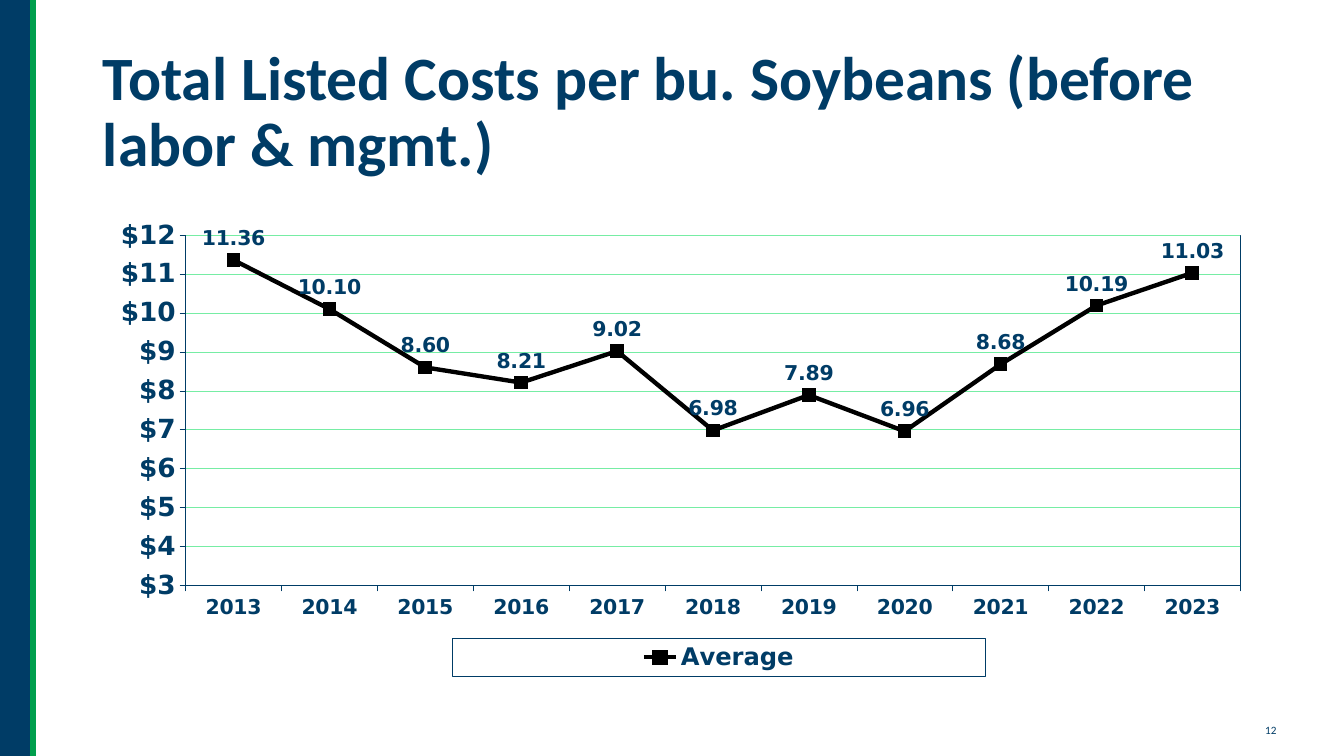
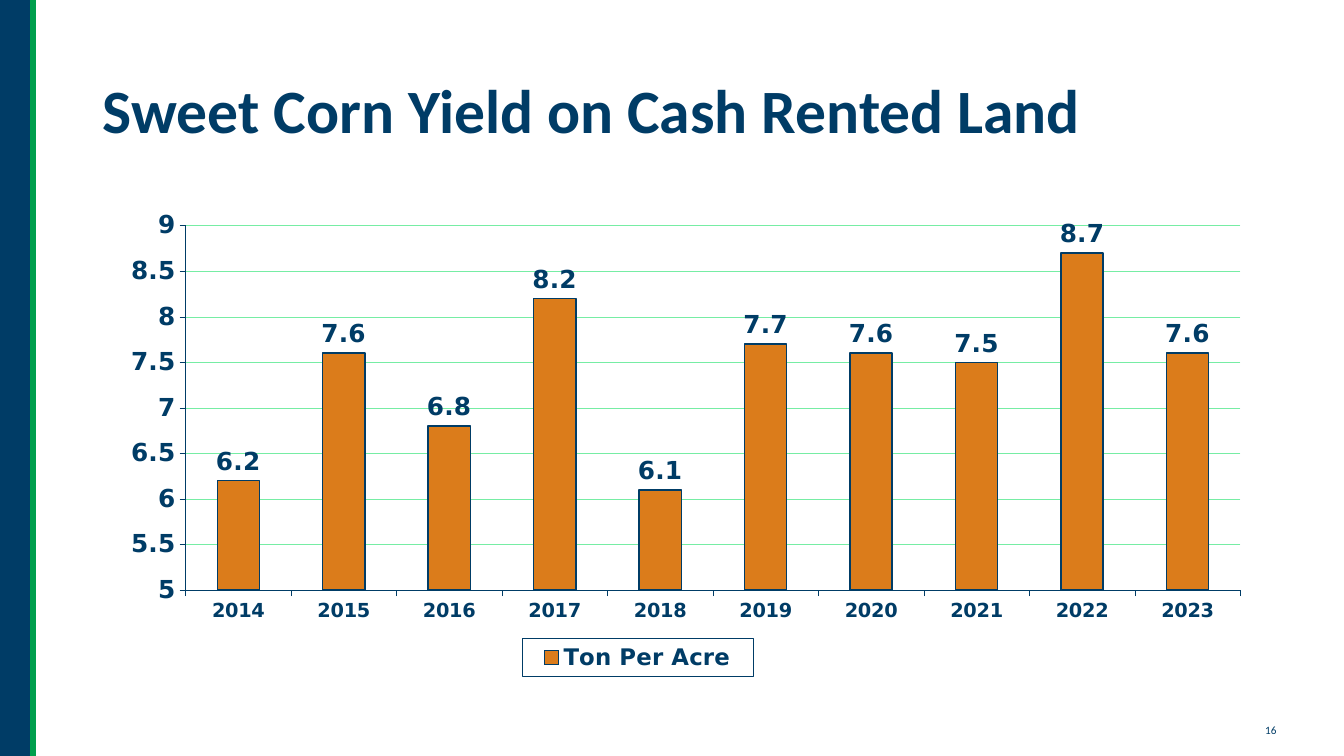
from lxml.etree import SubElement
from pptx import Presentation
from pptx.chart.data import CategoryChartData
from pptx.dml.color import RGBColor
from pptx.enum.chart import (XL_CHART_TYPE, XL_LABEL_POSITION, XL_LEGEND_POSITION,
                             XL_MARKER_STYLE, XL_TICK_LABEL_POSITION, XL_TICK_MARK)
from pptx.enum.shapes import MSO_CONNECTOR, MSO_SHAPE
from pptx.enum.text import MSO_ANCHOR, MSO_AUTO_SIZE, PP_ALIGN
from pptx.oxml import parse_xml
from pptx.oxml.ns import nsdecls, qn
from pptx.util import Cm, Pt

COLORS = {"navy": "003C66", "green": "009F4D", "grid": "76EDA4",
          "orange": "DB7C1B", "black": "000000"}


def rgb(name):
    return RGBColor.from_string(COLORS[name])


class Deck:
    text_font = "Calibri"
    chart_font = "DejaVu Sans"

    def __init__(self):
        self.prs = Presentation()
        self.prs.slide_width, self.prs.slide_height = Cm(33.87), Cm(19.05)
        self.s = None

    def slide(self, title, number):
        self.s = self.prs.slides.add_slide(self.prs.slide_layouts[5])
        self.bands()
        self.title(title)
        self.number(number)

    def style(self, font, size, name, bold=True):
        font.name, font.size, font.bold = name, Pt(size), bold
        font.color.rgb = rgb("navy")

    def stroke(self, line, color, width):
        line.color.rgb = rgb(color)
        line.width = Pt(width)

    def bands(self):
        height = self.prs.slide_height
        sp = self.s.shapes.add_shape(MSO_SHAPE.RECTANGLE, 0, 0, Cm(0.84), height)
        sp.shadow.inherit = False
        sp.fill.solid()
        sp.fill.fore_color.rgb = rgb("navy")
        sp.line.fill.background()
        edge = self.s.shapes.add_connector(MSO_CONNECTOR.STRAIGHT, Cm(0.84), 0, Cm(0.84), height)
        self.stroke(edge.line, "green", 4.5)
        SubElement(edge._element.spPr, qn("a:effectLst"))

    def title(self, text):
        sp = self.s.shapes.title
        sp.left, sp.top, sp.width, sp.height = Cm(2.34), Cm(1.02), Cm(29.21), Cm(3.68)
        tf = sp.text_frame
        tf.text = text
        tf.word_wrap = True
        tf.auto_size = MSO_AUTO_SIZE.NONE
        tf.vertical_anchor = MSO_ANCHOR.MIDDLE
        p = tf.paragraphs[0]
        p.alignment = PP_ALIGN.LEFT
        p.line_spacing = 0.9
        self.style(p.font, 44, self.text_font)

    def number(self, number):
        tf = self.s.shapes.add_textbox(Cm(31.6), Cm(18.11), Cm(0.86), Cm(0.61)).text_frame
        tf.word_wrap = False
        p = tf.paragraphs[0]
        p.text = str(number)
        p.alignment = PP_ALIGN.CENTER
        self.style(p.font, 8, self.text_font, False)

    def layout(self, parent, index, box, inner=False):
        for old in parent.findall(qn("c:layout")):
            parent.remove(old)
        layout = parse_xml(f"<c:layout {nsdecls('c')}><c:manualLayout/></c:layout>")
        settings = [("layoutTarget", "inner")] if inner else []
        settings += [("xMode", "edge"), ("yMode", "edge"), *zip("xywh", box)]
        for tag, value in settings:
            SubElement(layout[0], qn(f"c:{tag}"), val=str(value))
        parent.insert(index, layout)

    def frame(self):
        return parse_xml(
            f"<c:spPr {nsdecls('c', 'a')}><a:noFill/><a:ln w='3175'><a:solidFill>"
            f"<a:srgbClr val='{COLORS['navy']}'/></a:solidFill></a:ln></c:spPr>")

    def axis(self, axis, size):
        axis.major_tick_mark = XL_TICK_MARK.OUTSIDE
        axis.minor_tick_mark = XL_TICK_MARK.NONE
        self.stroke(axis.format.line, "navy", 0.25)
        self.style(axis.tick_labels.font, size, self.chart_font)

    def chart(self, kind, name, first_year, values, size, small, legend_size, scale,
              axis_format, label_format, label_size, label_position, plot_box, legend_box):
        data = CategoryChartData()
        data.categories = [str(first_year + i) for i in range(len(values))]
        data.add_series(name, values)
        chart = self.s.shapes.add_chart(
            kind, Cm(2.34), Cm(5.08), Cm(29.21), Cm(12.09), data).chart
        chart.has_title = False
        self.style(chart.font, size, self.chart_font)

        self.axis(chart.category_axis, small)
        chart.category_axis.tick_label_position = XL_TICK_LABEL_POSITION.LOW
        va = chart.value_axis
        self.axis(va, size)
        va.minimum_scale, va.maximum_scale, va.major_unit = scale
        va.tick_labels.number_format = axis_format
        va.tick_labels.number_format_is_linked = False
        va.has_major_gridlines = True
        self.stroke(va.major_gridlines.format.line, "grid", 0.25)

        plot = chart.plots[0]
        plot.vary_by_categories = False
        plot.has_data_labels = True
        labels = plot.data_labels
        labels.show_value = True
        labels.number_format = label_format
        labels.number_format_is_linked = False
        labels.position = label_position
        self.style(labels.font, label_size, self.chart_font)

        chart.has_legend = True
        legend = chart.legend
        legend.position = XL_LEGEND_POSITION.BOTTOM
        legend.include_in_layout = False
        self.style(legend.font, legend_size, self.chart_font)
        self.layout(legend._element, 1, legend_box)
        legend._element.find(qn("c:txPr")).addprevious(self.frame())
        self.layout(chart._chartSpace.chart.plotArea, 0, plot_box, True)
        return chart

    def line_chart(self, **options):
        chart = self.chart(XL_CHART_TYPE.LINE_MARKERS,
                           label_position=XL_LABEL_POSITION.ABOVE, **options)
        chart._chartSpace.chart.plotArea.append(self.frame())
        series = chart.plots[0].series[0]
        series.smooth = False
        self.stroke(series.format.line, "black", 3.13)
        marker = series.marker
        marker.style, marker.size = XL_MARKER_STYLE.SQUARE, 9
        marker.format.fill.solid()
        marker.format.fill.fore_color.rgb = rgb("black")
        marker.format.line.color.rgb = rgb("black")

    def column_chart(self, **options):
        chart = self.chart(XL_CHART_TYPE.COLUMN_CLUSTERED,
                           label_position=XL_LABEL_POSITION.OUTSIDE_END, **options)
        plot = chart.plots[0]
        plot.gap_width = 150
        series = plot.series[0]
        series.format.fill.solid()
        series.format.fill.fore_color.rgb = rgb("orange")
        self.stroke(series.format.line, "navy", 1)


def main():
    deck = Deck()
    deck.slide("Total Listed Costs per bu. Soybeans (before labor & mgmt.)", 12)
    deck.line_chart(
        name="Average", first_year=2013,
        values=[11.36, 10.1, 8.6, 8.21, 9.02, 6.98, 7.89, 6.96, 8.68, 10.19, 11.03],
        size=18.8, small=14.6, legend_size=17.3, scale=(3, 12, 1),
        axis_format='"$"#,##0', label_format="0.00", label_size=14.6,
        plot_box=(0.08, 0.07, 0.91, 0.73), legend_box=(0.31, 0.91, 0.46, 0.08))

    deck.slide("Sweet Corn Yield on Cash Rented Land", 16)
    deck.column_chart(
        name="Ton Per Acre", first_year=2014,
        values=[6.2, 7.6, 6.8, 8.2, 6.1, 7.7, 7.6, 7.5, 8.7, 7.6],
        size=17.7, small=13.8, legend_size=16.3, scale=(5, 9, 0.5),
        axis_format="General", label_format="0.0", label_size=17.7,
        plot_box=(0.08, 0.05, 0.91, 0.76), legend_box=(0.37, 0.91, 0.2, 0.08))
    deck.prs.save("out.pptx")


if __name__ == "__main__":
    main()
